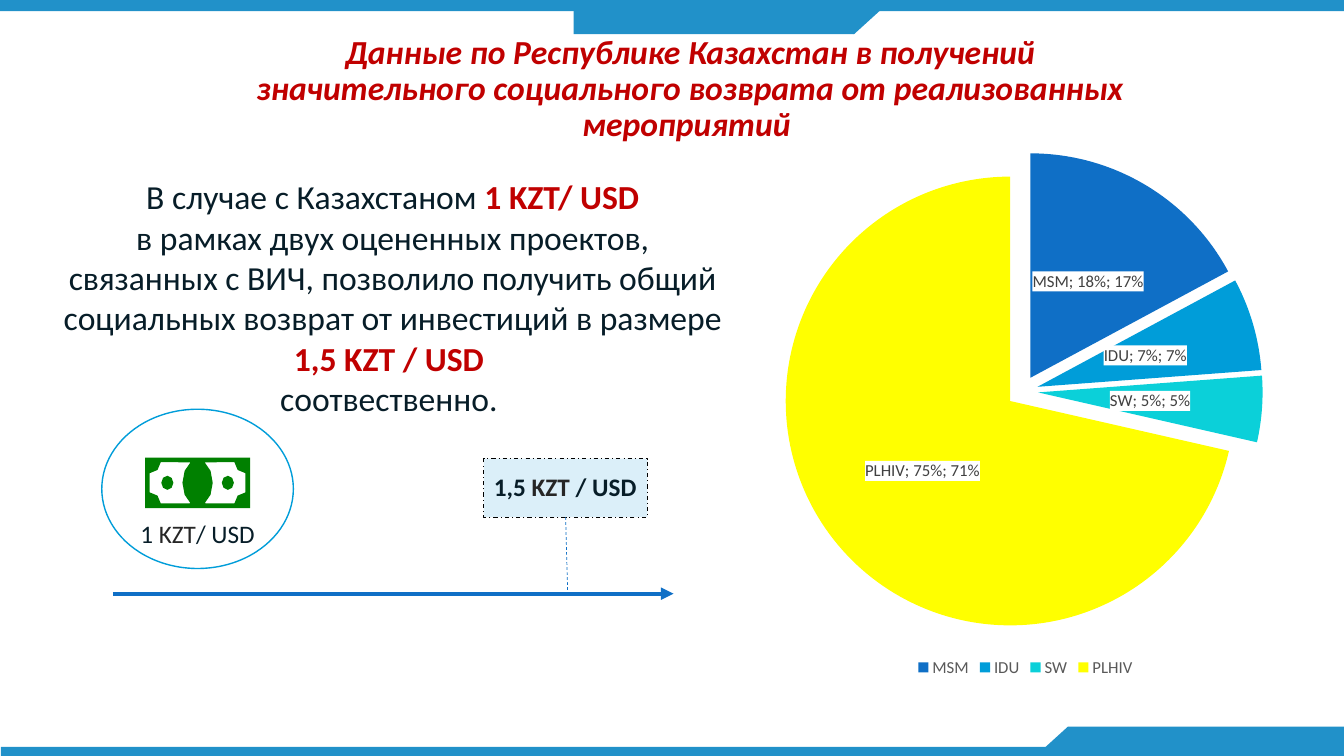
from dataclasses import dataclass
from math import cos, radians, sin

from pptx import Presentation
from pptx.chart.data import CategoryChartData
from pptx.dml.color import RGBColor
from pptx.enum.chart import XL_CHART_TYPE, XL_LABEL_POSITION, XL_LEGEND_POSITION
from pptx.enum.dml import MSO_LINE
from pptx.enum.shapes import MSO_CONNECTOR, MSO_SHAPE
from pptx.enum.text import MSO_ANCHOR, PP_ALIGN
from pptx.oxml import parse_xml
from pptx.oxml.ns import nsdecls, qn
from pptx.util import Inches, Pt


@dataclass(frozen=True)
class Theme:
    font: str = "Calibri"
    band: str = "2191C9"
    ink: str = "071D28"
    dark: str = "262626"
    accent: str = "C00000"
    blue: str = "0F6FC6"
    sky: str = "009DD9"
    teal: str = "0BD0D9"
    yellow: str = "FFFF00"
    pale: str = "DBEFF9"
    green: str = "008000"
    white: str = "FFFFFF"
    black: str = "000000"
    label: str = "404040"
    legend: str = "595959"
    large: int = 24
    medium: int = 18
    small: int = 12


@dataclass(frozen=True)
class Band:
    x: float
    y: float
    w: float
    h: float
    kind: MSO_SHAPE = MSO_SHAPE.RECTANGLE
    rotation: int = 0


@dataclass(frozen=True)
class Run:
    text: str
    color: str
    bold: bool = False
    italic: bool = False


@dataclass(frozen=True)
class Slice:
    name: str
    value: float
    color: str


T = Theme()

BANDS = [
    Band(0, 0, 13.33, 0.11),
    Band(0.01, 7.41, 13.33, 0.11),
    Band(5.69, 0.04, 2.78, 0.3),
    Band(8.14, 0.04, 0.66, 0.3, MSO_SHAPE.FLOWCHART_MERGE),
    Band(10.59, 7.21, 2.78, 0.3),
    Band(10.26, 7.21, 0.66, 0.3, MSO_SHAPE.FLOWCHART_MERGE, 180),
]

SLICES = [
    Slice("MSM", 0.18, T.blue),
    Slice("IDU", 0.07, T.sky),
    Slice("SW", 0.05, T.teal),
    Slice("PLHIV", 0.75, T.yellow),
]

TITLE = [[Run("Данные по Республике Казахстан в получений значительного социального "
              "возврата от реализованных мероприятий ", T.accent, True, True)]]
BODY = [
    [Run("В случае с Казахстаном ", T.ink), Run("1 KZT/ USD", T.accent, True)],
    [Run("в рамках двух оцененных проектов, связанных с ВИЧ, позволило получить общий "
         "социальных возврат от инвестиций в размере ", T.ink),
     Run("1,5 KZT / USD ", T.accent, True)],
    [Run("соотвественно. ", T.ink)],
]
INVESTED = [[Run("1 ", T.ink), Run("KZT", T.dark), Run("/ USD", T.ink)]]
RETURNED = [[Run("1,5 ", T.ink, True), Run("KZT ", T.dark, True), Run("/ USD", T.ink, True)]]


def rgb(color: str) -> RGBColor:
    return RGBColor.from_string(color)


def add_text(sp, paragraphs: list, *, size: int, align=PP_ALIGN.CENTER, spacing: float = 1.0,
             anchor=MSO_ANCHOR.MIDDLE, margins: tuple = (0.1, 0.05, 0.1, 0.05)) -> None:
    """Fill a shape with paragraphs of runs; margins are left, top, right, bottom."""
    tf = sp.text_frame
    tf.word_wrap = True
    tf.vertical_anchor = anchor
    tf.margin_left, tf.margin_top, tf.margin_right, tf.margin_bottom = map(Inches, margins)
    for i, runs in enumerate(paragraphs):
        p = tf.add_paragraph() if i else tf.paragraphs[0]
        p.alignment, p.line_spacing = align, spacing
        for run in runs:
            r = p.add_run()
            r.text = run.text
            r.font.name, r.font.size = T.font, Pt(size)
            r.font.bold, r.font.italic = run.bold, run.italic
            r.font.color.rgb = rgb(run.color)


def style_shape(sp, fill: str, line: str = "", width: float = 1) -> None:
    sp.shadow.inherit = False
    sp.fill.solid()
    sp.fill.fore_color.rgb = rgb(fill)
    if line:
        sp.line.color.rgb = rgb(line)
        sp.line.width = Pt(width)
    else:
        sp.line.fill.background()


def add_shape(s, kind, x: float, y: float, w: float, h: float, fill: str, line: str = "",
              width: float = 1):
    sp = s.shapes.add_shape(kind, Inches(x), Inches(y), Inches(w), Inches(h))
    style_shape(sp, fill, line, width)
    return sp


def add_textbox(s, x: float, y: float, w: float, h: float):
    return s.shapes.add_textbox(Inches(x), Inches(y), Inches(w), Inches(h))


def add_line(s, x1: float, y1: float, x2: float, y2: float, width: float):
    c = s.shapes.add_connector(MSO_CONNECTOR.STRAIGHT, Inches(x1), Inches(y1),
                               Inches(x2), Inches(y2))
    c.line.color.rgb = rgb(T.blue)
    c.line.width = Pt(width)
    c._element.spPr.append(parse_xml(f"<a:effectLst {nsdecls('a')}/>"))
    return c


def arc(cx: float, cy: float, rx: float, ry: float, start: int, end: int, steps: int) -> list:
    """Points along an ellipse, with angles in degrees clockwise from the right."""
    angles = [radians(start + (end - start) * i / steps) for i in range(steps + 1)]
    return [(cx + rx * cos(a), cy + ry * sin(a)) for a in angles]


def add_banknote(s) -> None:
    left, top, right, bottom = 1.44, 4.54, 2.48, 5.04
    cx, cy, rim, corner = (left + right) / 2, (top + bottom) / 2, 0.045, 0.11
    window = (arc(cx, cy, 0.15, 0.23, 242, 118, 4)
              + arc(left + rim, bottom - rim, corner, corner, 0, -90, 2)
              + arc(left + rim, top + rim, corner, corner, 90, 0, 2))
    coin = arc(cx - 0.3, cy, 0.06, 0.07, 0, 360, 8)[:-1]
    holes = [window, coin]
    mirrored = [[(2 * cx - x, y) for x, y in hole] for hole in holes]
    outline = [(left, top), (left, bottom), (right, bottom), (right, top)]
    fb = s.shapes.build_freeform(Inches(left), Inches(top), scale=1.0)
    for i, ring in enumerate([outline] + holes + mirrored):
        points = [(Inches(x), Inches(y)) for x, y in ring]
        if i:
            fb.move_to(*points[0])
        fb.add_line_segments(points[1:], close=True)
    style_shape(fb.convert_to_shape(), T.green)


def style_font(font, color: str) -> None:
    font.name, font.size = T.font, Pt(T.small)
    font.color.rgb = rgb(color)


def add_pie(s) -> None:
    data = CategoryChartData(number_format="0%")
    data.categories = [sl.name for sl in SLICES]
    data.add_series("Series 1", [sl.value for sl in SLICES])
    chart = s.shapes.add_chart(XL_CHART_TYPE.PIE, Inches(7.3), Inches(1.33), Inches(5.74),
                               Inches(5.43), data).chart
    chart.has_title = False
    chart.has_legend = True
    chart.legend.position = XL_LEGEND_POSITION.BOTTOM
    chart.legend.include_in_layout = False
    style_font(chart.legend.font, T.legend)

    plot = chart.plots[0]
    plot.vary_by_categories = True
    series = plot.series[0]
    for i, sl in enumerate(SLICES):
        fill = series.points[i].format.fill
        fill.solid()
        fill.fore_color.rgb = rgb(sl.color)
    explosion = parse_xml(f'<c:explosion {nsdecls("c")} val="7"/>')
    series._element.find(qn("c:dPt")).addprevious(explosion)

    labels = series.data_labels
    labels.show_category_name = labels.show_value = labels.show_percentage = True
    labels.number_format, labels.number_format_is_linked = "0%", False
    labels.position = XL_LABEL_POSITION.CENTER
    style_font(labels.font, T.label)
    dl = labels._element
    dl.find(qn("c:numFmt")).addnext(parse_xml(
        f'<c:spPr {nsdecls("c", "a")}><a:solidFill><a:srgbClr val="{T.white}"/>'
        "</a:solidFill></c:spPr>"))
    dl.find(qn("c:showBubbleSize")).addnext(
        parse_xml(f'<c:separator {nsdecls("c")}>; </c:separator>'))

    area = chart._chartSpace.chart.plotArea
    for old in area.findall(qn("c:layout")):
        area.remove(old)
    place = "".join(f'<c:{k} val="{v}"/>' for k, v in [
        ("layoutTarget", "inner"), ("xMode", "edge"), ("yMode", "edge"),
        ("x", 0.08), ("y", 0.03), ("w", 0.83), ("h", 0.88)])
    area.insert(0, parse_xml(f'<c:layout {nsdecls("c")}><c:manualLayout>{place}'
                             "</c:manualLayout></c:layout>"))


def main() -> None:
    prs = Presentation()
    prs.slide_width, prs.slide_height = Inches(13.33), Inches(7.5)
    s = prs.slides.add_slide(prs.slide_layouts[6])
    for b in BANDS:
        add_shape(s, b.kind, b.x, b.y, b.w, b.h, T.band).rotation = b.rotation

    circle = add_shape(s, MSO_SHAPE.FLOWCHART_CONNECTOR, 1.01, 4.06, 1.9, 1.58, T.white, T.sky)
    add_text(circle, INVESTED, size=T.medium, margins=(0, 0.88, 0, 0))
    add_pie(s)
    add_banknote(s)

    arrow = add_line(s, 1.12, 5.89, 6.68, 5.89, 3)
    arrow.line._get_or_add_ln().append(parse_xml(f'<a:tailEnd {nsdecls("a")} type="triangle"/>'))
    box = add_shape(s, MSO_SHAPE.RECTANGLE, 4.8, 4.55, 1.62, 0.58, T.pale, T.black, 0.75)
    box.line.dash_style = MSO_LINE.DASH_DOT
    add_text(box, RETURNED, size=T.medium, align=PP_ALIGN.LEFT, spacing=0.9,
             margins=(0.1, 0.05, 0.05, 0.05))
    drop = add_line(s, 5.61, 5.13, 5.63, 5.87, 0.5)
    drop.line.dash_style = MSO_LINE.DASH
    drop.begin_connect(box, 2)

    add_text(add_textbox(s, 0.5, 1.7, 6.79, 2.52), BODY, size=T.large, anchor=MSO_ANCHOR.TOP)
    add_text(add_textbox(s, 2.39, 0.46, 8.91, 0.86), TITLE, size=T.large, spacing=0.9)
    prs.save("out.pptx")


if __name__ == "__main__":
    main()
